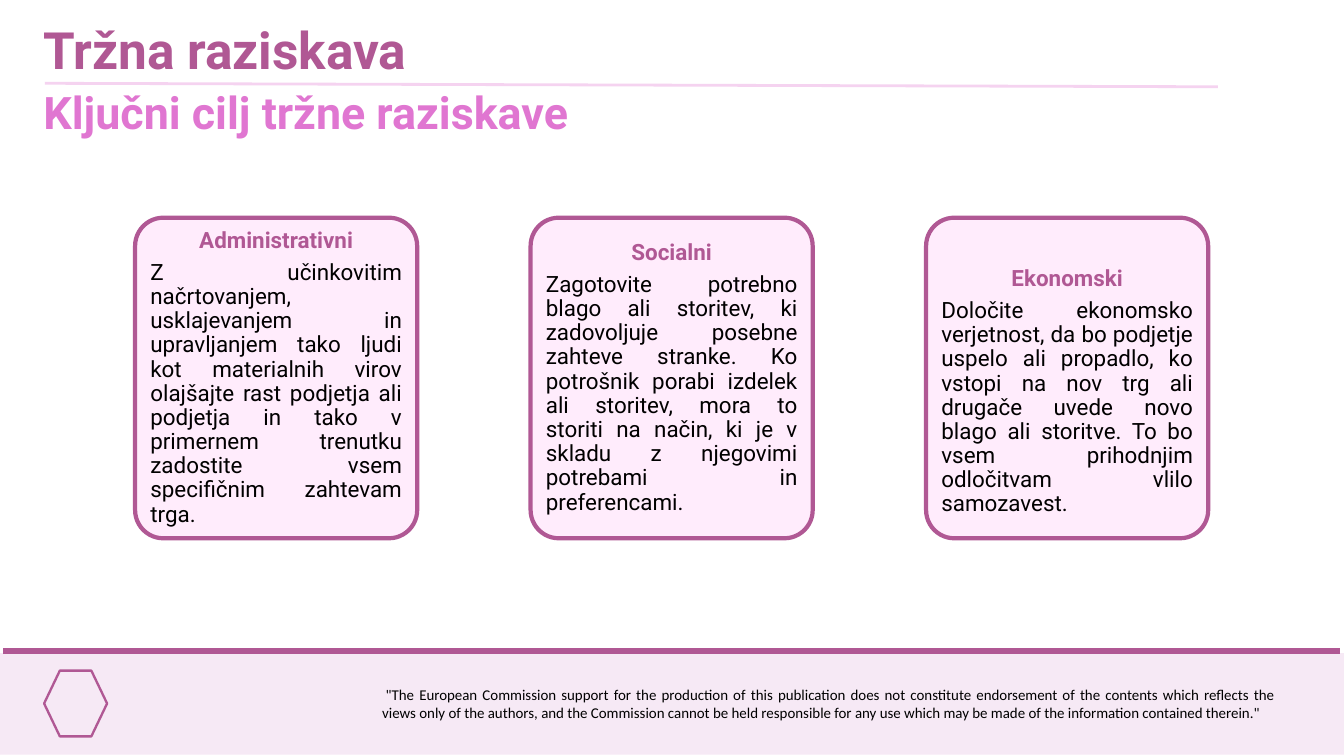
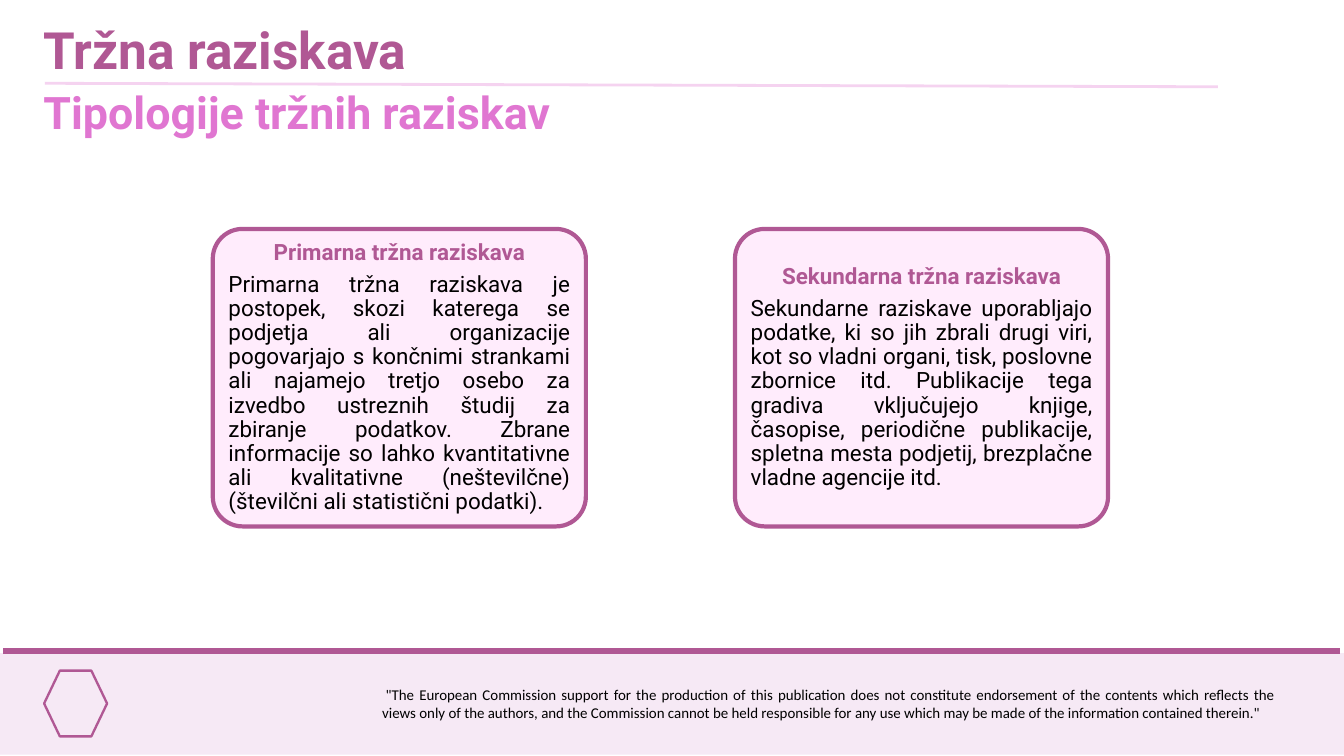
import pptx
import pptx.dml.color
import pptx.enum.shapes
import pptx.enum.text
import pptx.oxml
import pptx.oxml.ns
import pptx.util

PX = 9525  # EMU; the slide is 1920 x 1080 px
PLUM, ROSE, BLACK = "B05894", "E076D1", "000000"
BAND, RULE, CARD = "F6E9F5", "F5D3F0", "FFECFC"
FONT = "Roboto"
KIND = pptx.enum.shapes.MSO_SHAPE
ALIGN = pptx.enum.text.PP_ALIGN
ANCHOR = pptx.enum.text.MSO_ANCHOR

TITLE = "Tržna raziskava"
NOTICE = (
    '"The European Commission support for the production of this publication '
    "does not constitute endorsement of the contents which reflects the views "
    "only of the authors, and the Commission cannot be held responsible for any "
    'use which may be made of the information contained therein."'
)

# Each card: heading, body, extra space at the top in px
GOALS = [
    ("Administrativni",
     "Z učinkovitim načrtovanjem, usklajevanjem in upravljanjem tako ljudi kot "
     "materialnih virov olajšajte rast podjetja ali podjetja in tako v primernem "
     "trenutku zadostite vsem specifičnim zahtevam trga.", 0),
    ("Socialni",
     "Zagotovite potrebno blago ali storitev, ki zadovoljuje posebne zahteve "
     "stranke. Ko potrošnik porabi izdelek ali storitev, mora to storiti na način, "
     "ki je v skladu z njegovimi potrebami in preferencami.", 0),
    ("Ekonomski",
     "Določite ekonomsko verjetnost, da bo podjetje uspelo ali propadlo, ko vstopi "
     "na nov trg ali drugače uvede novo blago ali storitve. To bo vsem prihodnjim "
     "odločitvam vlilo samozavest.", 40),
]
TYPES = [
    ("Primarna tržna raziskava",
     "Primarna tržna raziskava je postopek, skozi katerega se podjetja ali "
     "organizacije pogovarjajo s končnimi strankami ali najamejo tretjo osebo za "
     "izvedbo ustreznih študij za zbiranje podatkov. Zbrane informacije so lahko "
     "kvantitativne ali kvalitativne (neštevilčne) (številčni ali statistični "
     "podatki).", 0),
    ("Sekundarna tržna raziskava",
     "Sekundarne raziskave uporabljajo podatke, ki so jih zbrali drugi viri, kot so "
     "vladni organi, tisk, poslovne zbornice itd. Publikacije tega gradiva "
     "vključujejo knjige, časopise, periodične publikacije, spletna mesta podjetij, "
     "brezplačne vladne agencije itd.", 0),
]


def px(*nums):
    return [pptx.util.Emu(n * PX) for n in nums]


def paint(code):
    return pptx.dml.color.RGBColor.from_string(code)


def place(shape, *box):
    shape.left, shape.top, shape.width, shape.height = px(*box)


def add_run(para, text, size, code, bold=False, font=FONT):
    run = para.add_run()
    run.text = text
    run.font.name = font
    run.font.size = pptx.util.Pt(size)
    run.font.bold = bold
    run.font.color.rgb = paint(code)


def set_frame(shape, anchor=ANCHOR.TOP, side=10, top=5, base=5):
    frame = shape.text_frame
    frame.word_wrap = True
    frame.auto_size = pptx.enum.text.MSO_AUTO_SIZE.NONE
    frame.vertical_anchor = anchor
    frame.margin_left, frame.margin_right = px(side, side)
    frame.margin_top, frame.margin_bottom = px(top, base)
    return frame


def add_shape(slide, kind, box, fill=None, line=None, width=0):
    shape = slide.shapes.add_shape(kind, *px(*box))
    shape.shadow.inherit = False
    if fill:
        shape.fill.solid()
        shape.fill.fore_color.rgb = paint(fill)
    else:
        shape.fill.background()
    if line:
        shape.line.color.rgb = paint(line)
        shape.line.width = pptx.util.Pt(width)
    else:
        shape.line.fill.background()
    return shape


def add_line(slide, ends, code, width):
    line = slide.shapes.add_connector(
        pptx.enum.shapes.MSO_CONNECTOR.STRAIGHT, *px(*ends))
    line.line.color.rgb = paint(code)
    line.line.width = pptx.util.Pt(width)
    props = line._element.spPr
    props.append(pptx.oxml.parse_xml(
        "<a:effectLst %s/>" % pptx.oxml.ns.nsdecls("a")))


def add_foot(slide):
    add_shape(slide, KIND.RECTANGLE, (0, 933, 1920, 145), BAND)
    add_line(slide, (5, 930, 1915, 930), PLUM, 6.75)
    add_shape(slide, KIND.HEXAGON, (63, 958, 90, 94), None, PLUM, 2.5)
    box = slide.shapes.add_textbox(*px(536, 974, 1296, 61))
    para = set_frame(box).paragraphs[0]
    para.alignment = ALIGN.JUSTIFY
    para._p.get_or_add_pPr().set("indent", str(5 * PX))
    add_run(para, NOTICE, 16, BLACK, font="Calibri")


def add_head(slide, topic):
    title = slide.shapes.title
    place(title, 52, 21, 1004, 99)
    para = set_frame(title).paragraphs[0]
    para.alignment = ALIGN.LEFT
    add_run(para, TITLE, 55, PLUM, True)
    add_line(slide, (64, 119, 1740, 124), RULE, 3)
    box = slide.shapes.add_textbox(*px(52, 116, 1428, 87))
    add_run(set_frame(box).paragraphs[0], topic, 48, ROSE, True)


def add_card(slide, box, head, body, drop):
    card = add_shape(slide, KIND.ROUNDED_RECTANGLE, box, CARD, PLUM, 4.5)
    card.adjustments[0] = 0.1
    frame = set_frame(card, ANCHOR.MIDDLE, top=10 + drop, base=10)
    first, last = frame.paragraphs[0], frame.add_paragraph()
    first.alignment, last.alignment = ALIGN.CENTER, ALIGN.JUSTIFY
    for para in (first, last):
        para.line_spacing = 0.9
        para.space_after = pptx.util.Pt(8.4)
    add_run(first, head, 24, PLUM, True)
    add_run(last, body, 24, BLACK)


def add_slide(deck, topic, cards, box, pitch):
    """Lay the cards in a row: box is the first one, pitch the step."""
    slide = deck.slides.add_slide(deck.slide_layouts[5])
    add_foot(slide)
    add_head(slide, topic)
    left, *rest = box
    for i, card in enumerate(cards):
        add_card(slide, (left + i * pitch, *rest), *card)


def main():
    deck = pptx.Presentation()
    deck.slide_width, deck.slide_height = px(1920, 1080)
    add_slide(deck, "Ključni cilj tržne raziskave", GOALS,
              (193, 311, 403, 458), 565)
    add_slide(deck, "Tipologije tržnih raziskav", TYPES,
              (304, 327, 533, 425), 746)
    deck.save("out.pptx")


if __name__ == "__main__":
    main()
